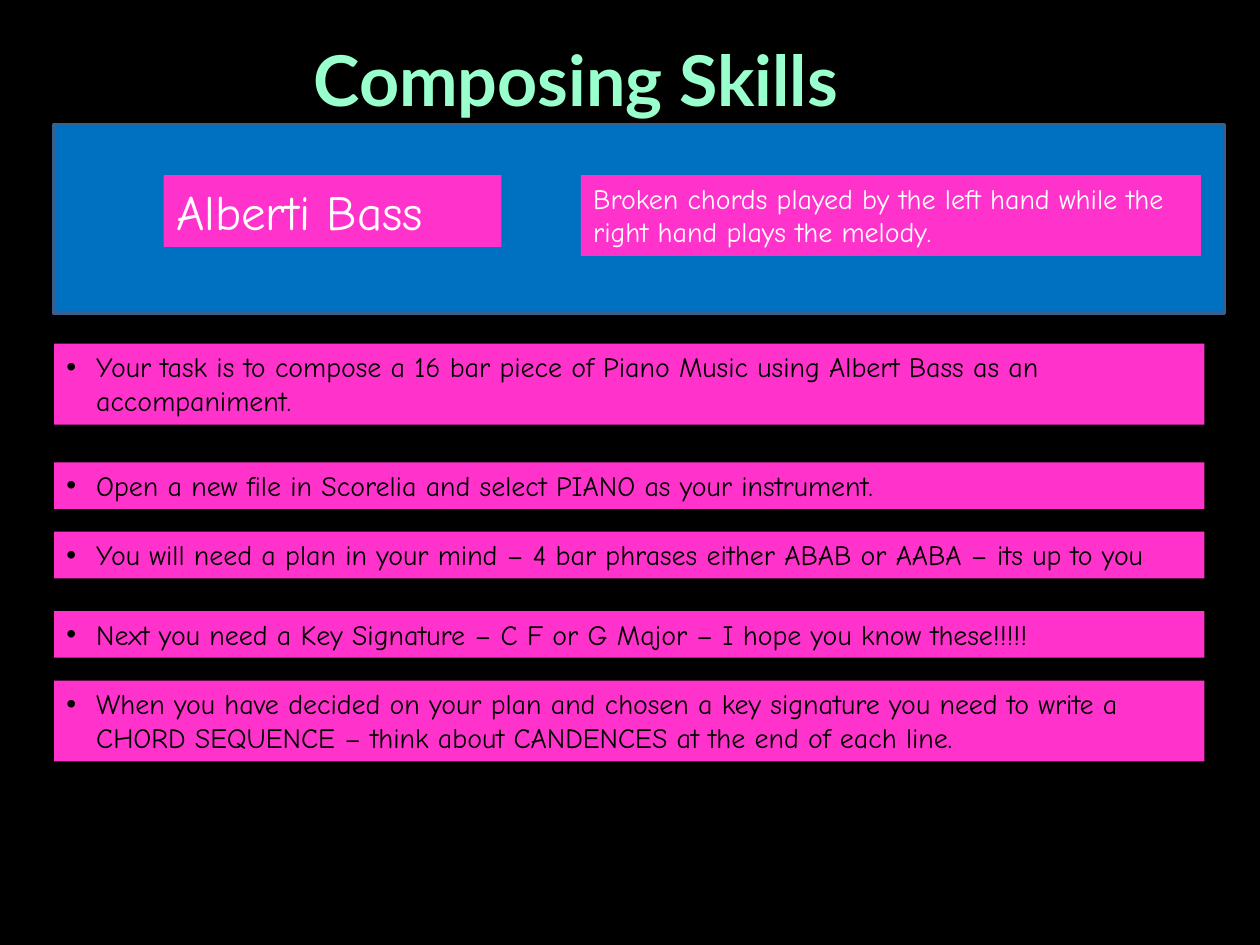
from dataclasses import dataclass

from lxml import etree
from pptx import Presentation
from pptx import util as u
from pptx.dml.color import RGBColor
from pptx.enum import shapes, text
from pptx.oxml import ns


@dataclass(frozen=True)
class Theme:
    background: str = "000000"
    panel: str = "0070C0"
    panel_line: str = "3A5F8C"
    label: str = "FF33CC"
    title: str = "99FFCC"
    light: str = "FFFFFF"
    dark: str = "000000"
    title_font: str = "Lato"
    body_font: str = "Comic Neue"
    title_size: int = 40
    term_size: int = 28
    body_size: int = 16
    bullet_indent: float = 0.6


class SlideBuilder:
    def __init__(self, page, theme):
        self.page = page
        self.theme = theme
        self.paint(page.background.fill, theme.background)

    def paint(self, fill, color):
        fill.solid()
        fill.fore_color.rgb = RGBColor.from_string(color)

    def panel(self, *place):
        box = self.page.shapes.add_shape(
            shapes.MSO_SHAPE.RECTANGLE, *map(u.Cm, place))
        box.shadow.inherit = False
        self.paint(box.fill, self.theme.panel)
        box.line.color.rgb = RGBColor.from_string(self.theme.panel_line)
        box.line.width = u.Pt(2)

    def text_box(self, place, words, font, size, color, bullet=False):
        box = self.page.shapes.add_textbox(*map(u.Cm, place))
        box.text_frame.word_wrap = True
        para = box.text_frame.paragraphs[0]
        para.text = words
        if bullet:
            self.add_bullet(para)
        para.font.name = font
        para.font.size = u.Pt(size)
        para.font.color.rgb = RGBColor.from_string(color)
        return box

    def add_bullet(self, para):
        indent = u.Cm(self.theme.bullet_indent)
        properties = para._p.get_or_add_pPr()
        properties.set("marL", str(indent))
        properties.set("indent", str(-indent))
        font = etree.SubElement(properties, ns.qn("a:buFont"))
        font.set("typeface", "Arial")
        mark = etree.SubElement(properties, ns.qn("a:buChar"))
        mark.set("char", "•")

    def title(self, place, words):
        theme = self.theme
        box = self.text_box(place, words, theme.title_font, theme.title_size, theme.title)
        box.text_frame.vertical_anchor = text.MSO_ANCHOR.MIDDLE
        para = box.text_frame.paragraphs[0]
        para.alignment = text.PP_ALIGN.CENTER
        para.font.bold = True

    def label(self, place, words, size, color, bullet=False):
        box = self.text_box(place, words, self.theme.body_font, size, color, bullet)
        self.paint(box.fill, self.theme.label)


LEFT = 1.09
STEP_WIDTH = 23.19
ONE_LINE = 0.94
TWO_LINES = 1.63

STEPS = [
    (6.93, TWO_LINES, "Your task is to compose a 16 bar piece of Piano Music "
     "using Albert Bass as an accompaniment."),
    (9.32, ONE_LINE, "Open a new file in Scorelia and select PIANO as your instrument."),
    (10.72, ONE_LINE, "You will need a plan in your mind – 4 bar phrases "
     "either ABAB or AABA – its up to you"),
    (12.32, ONE_LINE, "Next you need a Key Signature – C F or G Major – "
     "I hope you know these!!!!!"),
    (13.72, TWO_LINES, "When you have decided on your plan and chosen a key signature "
     "you need to write a CHORD SEQUENCE – think about CANDENCES "
     "at the end of each line."),
]


def main():
    deck = Presentation()
    deck.slide_width, deck.slide_height = u.Cm(25.4), u.Cm(19.05)
    theme = Theme()
    slide = SlideBuilder(deck.slides.add_slide(deck.slide_layouts[6]), theme)

    slide.panel(LEFT, 2.51, 23.6, 3.81)
    slide.title((5.49, 0, 12.24, 3.18), "Composing Skills")
    slide.label((11.71, 3.53, 12.5, TWO_LINES),
                "Broken chords played by the left hand while the "
                "right hand plays the melody.", theme.body_size, theme.light)
    slide.label((3.3, 3.53, 6.81, 1.45), "Alberti Bass", theme.term_size, theme.light)
    for top, height, words in STEPS:
        slide.label((LEFT, top, STEP_WIDTH, height), words,
                    theme.body_size, theme.dark, bullet=True)

    deck.save("out.pptx")


if __name__ == "__main__":
    main()
